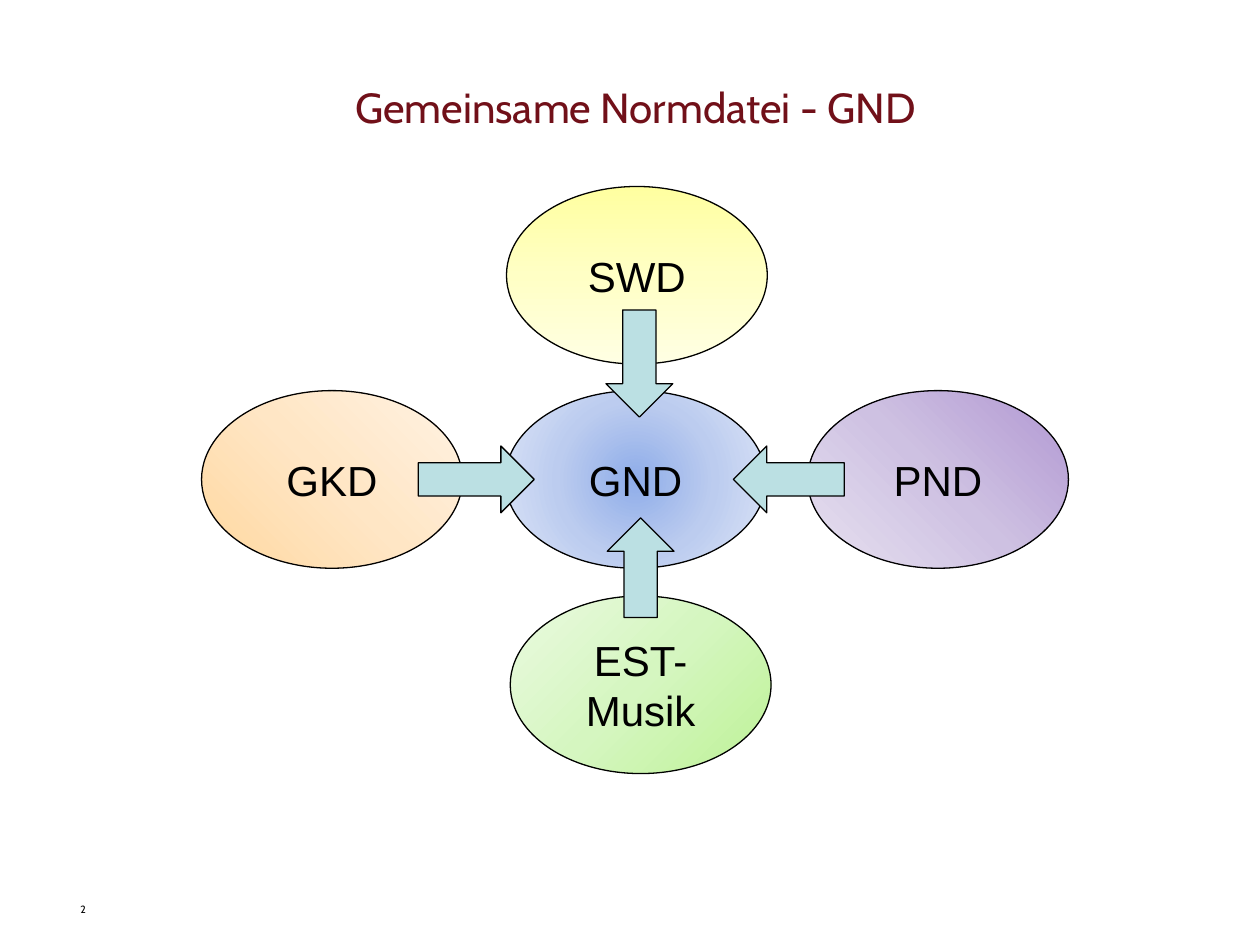
from pptx import Presentation
from pptx.dml.color import RGBColor
from pptx.enum.shapes import MSO_SHAPE
from pptx.enum.text import MSO_ANCHOR, PP_ALIGN
from pptx.oxml import parse_xml
from pptx.oxml.ns import nsdecls, qn
from pptx.util import Inches, Pt

OVAL_WIDTH, OVAL_HEIGHT = 2.07, 1.41
MIDDLE_ROW = 3.1
CENTRED = '<a:path path="circle"><a:fillToRect l="50000" t="50000" r="50000" b="50000"/></a:path>'


def color(hex_code):
    return RGBColor.from_string(hex_code)


def linear(degrees):
    return f'<a:lin ang="{degrees * 60000}" scaled="0"/>'


class SlideBuilder:
    heading_font = "Cabin"
    body_font = "Arial"
    ink = "000000"
    heading_color = "711019"
    arrow_color = "BBE0E3"

    def __init__(self, deck):
        self.page = deck.slides.add_slide(deck.slide_layouts[5])

    def style(self, para, font_name, size, hex_code, align):
        para.alignment = align
        font = para.font
        font.name, font.size, font.bold = font_name, Pt(size), False
        font.color.rgb = color(hex_code)

    def title(self, text, left, top, width, height):
        box = self.page.shapes.title
        box.left, box.top = Inches(left), Inches(top)
        box.width, box.height = Inches(width), Inches(height)
        frame = box.text_frame
        frame.text = text
        frame.vertical_anchor = MSO_ANCHOR.TOP
        self.style(frame.paragraphs[0], self.heading_font, 24, self.heading_color, PP_ALIGN.CENTER)

    def page_number(self, text, left, top, width, height):
        box = self.page.shapes.add_textbox(Inches(left), Inches(top), Inches(width), Inches(height))
        frame = box.text_frame
        frame.word_wrap = True
        frame.text = text
        self.style(frame.paragraphs[0], self.heading_font, 6, self.ink, PP_ALIGN.LEFT)

    def outlined_shape(self, kind, left, top, width, height):
        shape = self.page.shapes.add_shape(
            kind, Inches(left), Inches(top), Inches(width), Inches(height))
        shape.shadow.inherit = False
        shape.line.color.rgb = color(self.ink)
        shape.line.width = Pt(0.75)
        return shape

    def gradient(self, shape, colors, direction):
        """Fill a shape with three evenly spaced stops."""
        stops = "".join(
            f'<a:gs pos="{index * 50000}"><a:srgbClr val="{hex_code}"/></a:gs>'
            for index, hex_code in enumerate(colors))
        shape.fill.background()
        properties = shape._element.spPr
        properties.replace(properties.find(qn("a:noFill")), parse_xml(
            f'<a:gradFill {nsdecls("a")} rotWithShape="1">'
            f"<a:gsLst>{stops}</a:gsLst>{direction}</a:gradFill>"))

    def oval(self, text, left, top, colors, direction):
        shape = self.outlined_shape(MSO_SHAPE.OVAL, left, top, OVAL_WIDTH, OVAL_HEIGHT)
        self.gradient(shape, colors, direction)
        frame = shape.text_frame
        frame.word_wrap = True
        frame.vertical_anchor = MSO_ANCHOR.MIDDLE
        frame.text = text
        self.style(frame.paragraphs[0], self.body_font, 24, self.ink, PP_ALIGN.CENTER)

    def arrow(self, kind, left, top, width, height):
        shape = self.outlined_shape(kind, left, top, width, height)
        shape.fill.solid()
        shape.fill.fore_color.rgb = color(self.arrow_color)


def main():
    deck = Presentation()
    deck.slide_width, deck.slide_height = Inches(10), Inches(7.5)
    slide = SlideBuilder(deck)

    slide.page_number("2", 0.54, 7.12, 2.05, 0.38)
    slide.title("Gemeinsame Normdatei - GND", 0.6, 0.6, 8.89, 0.74)

    for text, left, top, colors, direction in (
        ("GKD", 1.6, MIDDLE_ROW, ("FFD8A0", "FFE6C5", "FFF2E3"), linear(315)),
        ("PND", 6.41, MIDDLE_ROW, ("B197D2", "CEC1E2", "E7E1F0"), linear(135)),
        ("SWD", 4.02, 1.48, ("FFFFA0", "FFFFC5", "FFFFE3"), linear(90)),
        ("EST-Musik", 4.05, 4.73, ("BEF297", "D5F6C0", "EAFAE0"), linear(225)),
        ("GND", 4.01, MIDDLE_ROW, ("8FADE9", "BCCCEF", "DEE6F7"), CENTRED),
    ):
        slide.oval(text, left, top, colors, direction)

    thickness = 0.53
    slide.arrow(MSO_SHAPE.RIGHT_ARROW, 3.32, 3.54, 0.92, thickness)
    slide.arrow(MSO_SHAPE.DOWN_ARROW, 4.81, 2.46, thickness, 0.85)
    slide.arrow(MSO_SHAPE.LEFT_ARROW, 5.82, 3.54, 0.88, thickness)
    slide.arrow(MSO_SHAPE.UP_ARROW, 4.82, 4.11, thickness, 0.79)

    deck.save("out.pptx")


if __name__ == "__main__":
    main()
